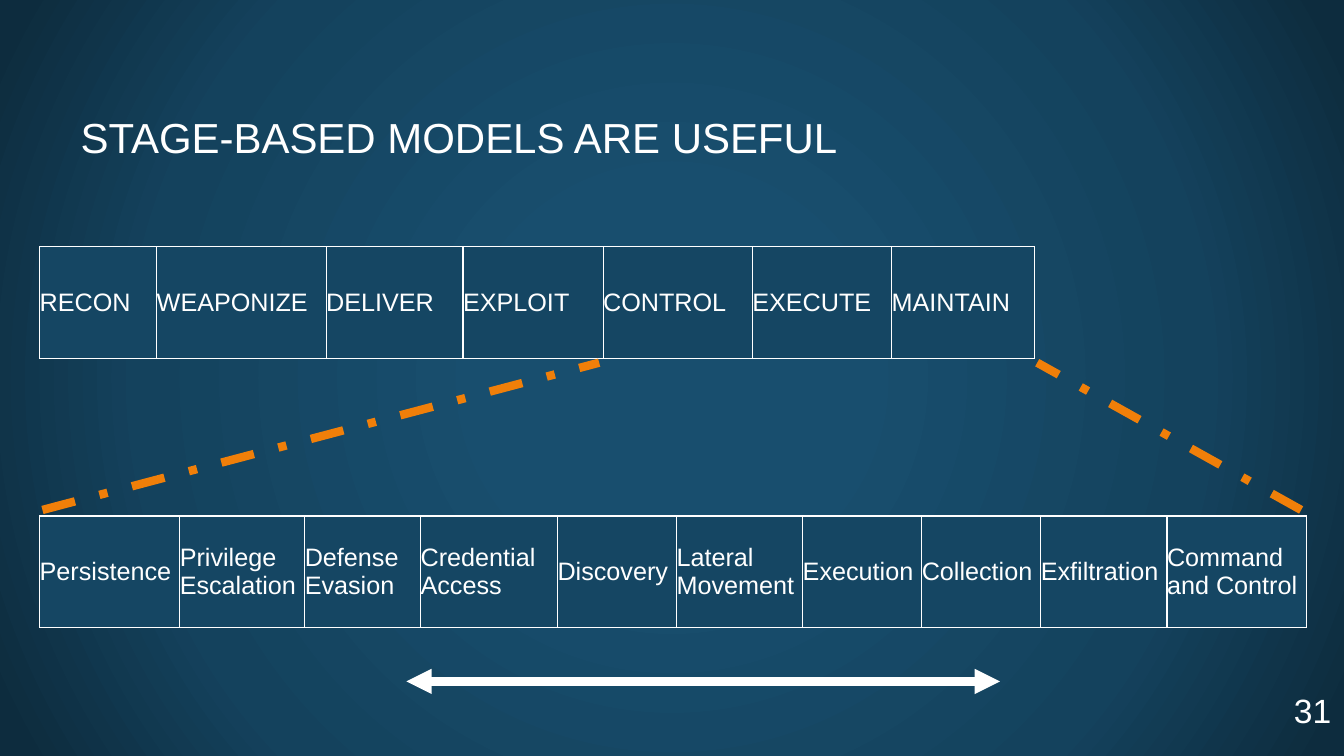
from lxml.etree import SubElement
from pptx import Presentation
from pptx.dml.color import RGBColor
from pptx.enum.dml import MSO_LINE
from pptx.enum.shapes import MSO_CONNECTOR
from pptx.enum.text import MSO_ANCHOR, PP_ALIGN
from pptx.oxml.ns import qn
from pptx.util import Cm, Pt

WHITE = RGBColor(0xFF, 0xFF, 0xFF)
ORANGE = RGBColor(0xF0, 0x7F, 0x09)
NAVY = RGBColor(0x15, 0x46, 0x63)
GLOW = [(0, "184E6E"), (23, "184E6E"), (69, "14425D"),
        (97, "0D2C3E"), (100, "0D2C3E")]

STAGES = [("RECON", 2.95), ("WEAPONIZE", 4.27), ("DELIVER", 3.45),
          ("EXPLOIT", 3.53), ("CONTROL", 3.76), ("EXECUTE", 3.51),
          ("MAINTAIN", 3.61)]
TACTICS = [("Persistence", 3.53), ("Privilege\nEscalation", 3.15),
           ("Defense\nEvasion", 2.92), ("Credential\nAccess", 3.45),
           ("Discovery", 3), ("Lateral\nMovement", 3.18),
           ("Execution", 3), ("Collection", 3),
           ("Exfiltration", 3.18), ("Command\nand Control", 3.51)]


def set_font(para, size):
    for run in para.runs:
        run.font.name = "Arial"
        run.font.size = Pt(size)
        run.font.color.rgb = WHITE


def add_glow(slide):
    """Fill the background with a radial gradient from the centre."""
    slide.background.fill.gradient()
    grad = slide.element.find(".//" + qn("a:gradFill"))
    for child in list(grad):
        grad.remove(child)
    stops = SubElement(grad, qn("a:gsLst"))
    for pos, color in GLOW:
        stop = SubElement(stops, qn("a:gs"), pos=str(pos * 1000))
        SubElement(stop, qn("a:srgbClr"), val=color)
    path = SubElement(grad, qn("a:path"), path="circle")
    SubElement(path, qn("a:fillToRect"), l="50000", t="50000",
               r="50000", b="50000")


def set_text(shape, text, size, align):
    frame = shape.text_frame
    frame.text = text
    frame.word_wrap = True
    frame.vertical_anchor = MSO_ANCHOR.MIDDLE
    frame.margin_left = frame.margin_right = Cm(0.13)
    frame.margin_top = frame.margin_bottom = Cm(0.13)
    para = frame.paragraphs[0]
    para.alignment = align
    set_font(para, size)


def add_title(slide, left, top, width, height):
    title = slide.shapes.title
    title.left, title.top = Cm(left), Cm(top)
    title.width, title.height = Cm(width), Cm(height)
    set_text(title, "STAGE-BASED MODELS ARE USEFUL", 30, PP_ALIGN.LEFT)


def add_number(slide, left, top, width, height):
    box = slide.shapes.add_textbox(Cm(left), Cm(top), Cm(width), Cm(height))
    set_text(box, "31", 24, PP_ALIGN.RIGHT)


def add_edges(cell):
    props = cell._tc.get_or_add_tcPr()
    for side in ("lnL", "lnR", "lnT", "lnB"):
        edge = SubElement(props, qn("a:" + side), w=str(Pt(1)))
        fill = SubElement(edge, qn("a:solidFill"))
        SubElement(fill, qn("a:srgbClr"), val=str(WHITE))


def add_chain(slide, steps, left, top, height):
    """Draw the steps as a one-row table and return its right edge in cm."""
    width = sum(wide for _, wide in steps)
    table = slide.shapes.add_table(1, len(steps), Cm(left), Cm(top),
                                   Cm(width), Cm(height)).table
    table.first_row = table.horz_banding = False
    table.rows[0].height = Cm(height)
    for col, cell, (text, wide) in zip(table.columns, table.rows[0].cells,
                                       steps):
        col.width = Cm(wide)
        add_edges(cell)
        cell.fill.solid()
        cell.fill.fore_color.rgb = NAVY
        cell.margin_left = cell.margin_right = 0
        cell.margin_top = cell.margin_bottom = 0
        cell.vertical_anchor = MSO_ANCHOR.MIDDLE
        para = cell.text_frame.paragraphs[0]
        para.text = text
        set_font(para, 18)
    return left + width


def add_line(slide, start, end, color):
    line = slide.shapes.add_connector(
        MSO_CONNECTOR.STRAIGHT, *map(Cm, start + end))
    line.line.color.rgb = color
    line.line.width = Pt(6)
    SubElement(line.element.spPr, qn("a:effectLst"))
    return line.line


def add_zoom(slide, upper, lower, top, bottom):
    """Join the left and right ends of the lower span to the upper span."""
    for high, low in zip(upper, lower):
        line = add_line(slide, (low, bottom), (high, top), ORANGE)
        line.dash_style = MSO_LINE.DASH_DOT


def add_arrow(slide, left, right, y):
    line = add_line(slide, (right, y), (left, y), WHITE)
    for end in ("headEnd", "tailEnd"):
        SubElement(line._get_or_add_ln(), qn("a:" + end), type="triangle")


def main():
    deck = Presentation()
    deck.slide_width, deck.slide_height = Cm(33.87), Cm(19.05)
    slide = deck.slides.add_slide(deck.slide_layouts[5])
    add_glow(slide)
    add_title(slide, 1.9, 1.7, 30.12, 3.5)
    high, low, tall = 6.22, 13, 2.82
    left = 1
    end = add_chain(slide, STAGES, left, high, tall)
    edge = add_chain(slide, TACTICS, left, low, tall)
    split = left + sum(wide for _, wide in STAGES[:4])
    add_zoom(slide, (split - 0.1, end + 0.06), (left + 0.07, edge - 0.13),
             high + tall + 0.1, low - 0.15)
    add_arrow(slide, 10.24, 25.2, 17.17)
    add_number(slide, 30.02, 17.22, 3.66, 1.37)
    deck.save("out.pptx")


if __name__ == "__main__":
    main()
